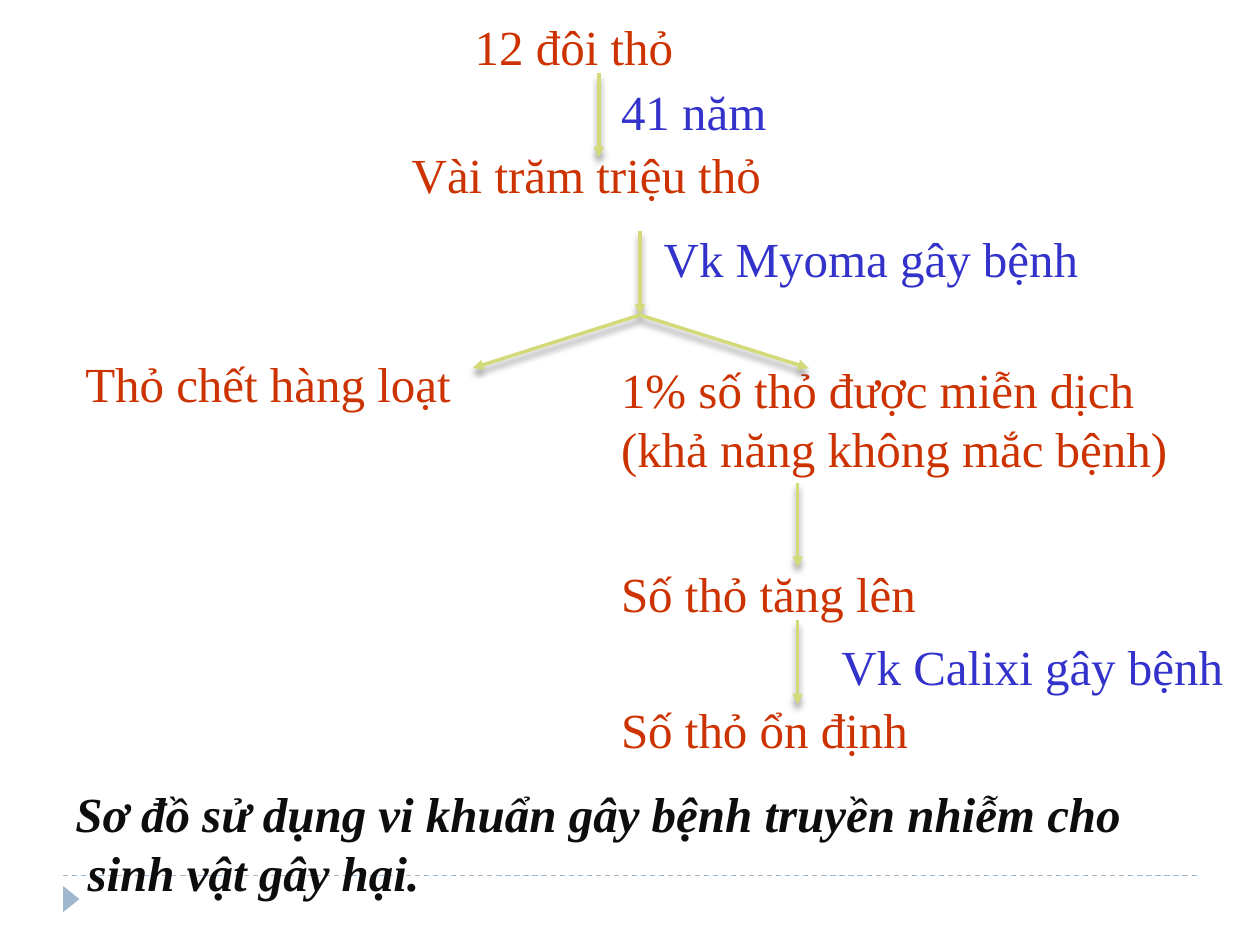
from lxml.etree import SubElement
from pptx import Presentation
from pptx.dml.color import RGBColor
from pptx.enum.dml import MSO_LINE
from pptx.enum.shapes import MSO_CONNECTOR, MSO_SHAPE
from pptx.enum.text import MSO_ANCHOR
from pptx.oxml import parse_xml
from pptx.oxml.ns import nsdecls, qn
from pptx.util import Cm, Pt

FONT = "Times New Roman"
RED, BLUE, DARK = "CC3300", "3333CC", "0D0D0D"
GREEN, STEEL = "D2DA7A", "9FB8CD"
ROW, PAIR, DROP = 1.45, 2.64, 1.7
RIGHT = 12.27

LABELS = [
    ("12 đôi thỏ", 9.32, 0.2, 7.19, ROW, RED),
    ("41 năm", RIGHT, 1.52, 8.46, ROW, BLUE),
    ("Vài trăm triệu thỏ", 8.05, 2.79, 8.46, ROW, RED),
    ("Vk Myoma gây bệnh", 13.13, 4.47, 10.36, ROW, BLUE),
    ("Thỏ chết hàng loạt", 1.47, 6.99, 8.46, ROW, RED),
    ("1% số thỏ được miễn dịch (khả năng không mắc bệnh)",
     RIGHT, 7.11, 12.27, PAIR, RED),
    ("Số thỏ tăng lên", RIGHT, 11.23, 6.99, ROW, RED),
    ("Vk Calixi gây bệnh", 16.71, 12.7, 9.53, ROW, BLUE),
    ("Số thỏ ổn định", RIGHT, 13.97, 6.55, ROW, RED),
]
CAPTION = ("Sơ đồ sử dụng vi khuẩn gây bệnh truyền nhiễm cho\n sinh vật gây hại.",
           1.27, 15.67, 25.4, PAIR, DARK)
DROPS = [(12.07, 1.47), (12.9, 4.65), (16.08, 9.73), (16.08, 12.5)]
FORK = (12.9, 6.35)
TIPS = [(9.53, 7.42), (16.3, 7.42)]
SHADOW = (
    f'<a:effectLst {nsdecls("a")}>'
    f'<a:outerShdw blurRad="{Pt(4)}" dist="{Pt(3.4)}" dir="5400000" rotWithShape="0">'
    '<a:srgbClr val="000000"><a:alpha val="40000"/></a:srgbClr>'
    '</a:outerShdw></a:effectLst>'
)


def tint(code):
    """Turn a hex string into a colour."""
    return RGBColor.from_string(code)


def label(slide, text, x, y, w, h, color, strong=False):
    """Add a text box with one style throughout."""
    frame = slide.shapes.add_textbox(Cm(x), Cm(y), Cm(w), Cm(h)).text_frame
    frame.word_wrap = True
    frame.vertical_anchor = MSO_ANCHOR.MIDDLE
    frame.text = text
    for para in frame.paragraphs:
        for run in para.runs:
            font = run.font
            font.name, font.size = FONT, Pt(28)
            font.color.rgb = tint(color)
            if strong:
                font.bold = font.italic = True


def line(slide, start, end, color, width, effect):
    """Add a straight line with the given effect list."""
    link = slide.shapes.add_connector(
        MSO_CONNECTOR.STRAIGHT, *(Cm(v) for v in (*start, *end)))
    link.line.color.rgb = tint(color)
    link.line.width = Pt(width)
    link._element.spPr.append(parse_xml(effect))
    return link


def arrow(slide, start, end):
    """Add a shadowed line that ends in an arrowhead."""
    link = line(slide, start, end, GREEN, 2, SHADOW)
    SubElement(link.line._get_or_add_ln(), qn("a:tailEnd"), type="triangle")


def footer(slide):
    """Add the dashed rule and the small marker."""
    rule = line(slide, (1.27, 17.65), (24.13, 17.65), STEEL, 0.75,
                f'<a:effectLst {nsdecls("a")}/>')
    rule.line.dash_style = MSO_LINE.DASH
    mark = slide.shapes.add_shape(
        MSO_SHAPE.ISOSCELES_TRIANGLE, Cm(1.17), Cm(17.96), Cm(0.53), Cm(0.33))
    mark.rotation = 90
    mark.shadow.inherit = False
    mark.fill.solid()
    mark.fill.fore_color.rgb = tint(STEEL)
    mark.line.fill.background()


def main():
    """Build and save the slide."""
    deck = Presentation()
    deck.slide_width, deck.slide_height = Cm(25.4), Cm(19.05)
    slide = deck.slides.add_slide(deck.slide_layouts[6])
    footer(slide)
    for item in LABELS:
        label(slide, *item)
    label(slide, *CAPTION, strong=True)
    for x, y in DROPS:
        arrow(slide, (x, y), (x, y + DROP))
    for tip in TIPS:
        arrow(slide, FORK, tip)
    deck.save("out.pptx")


if __name__ == "__main__":
    main()
